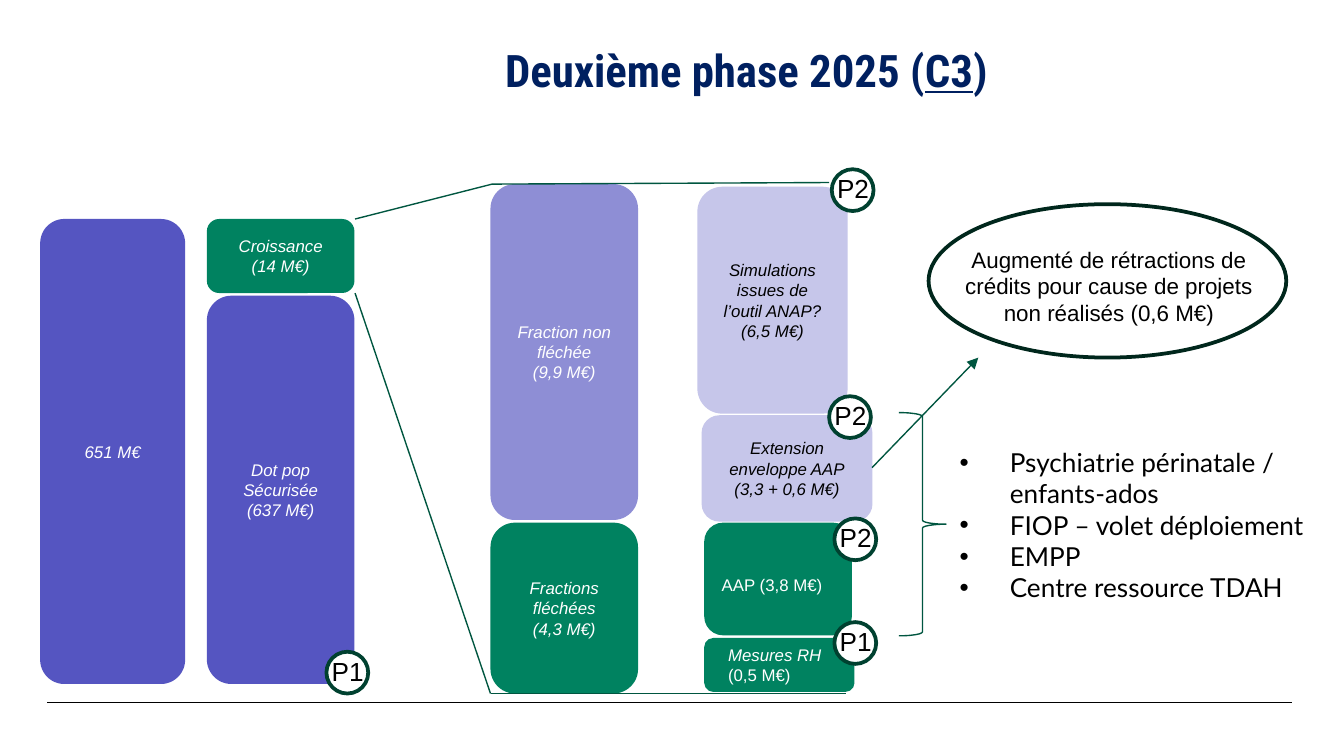
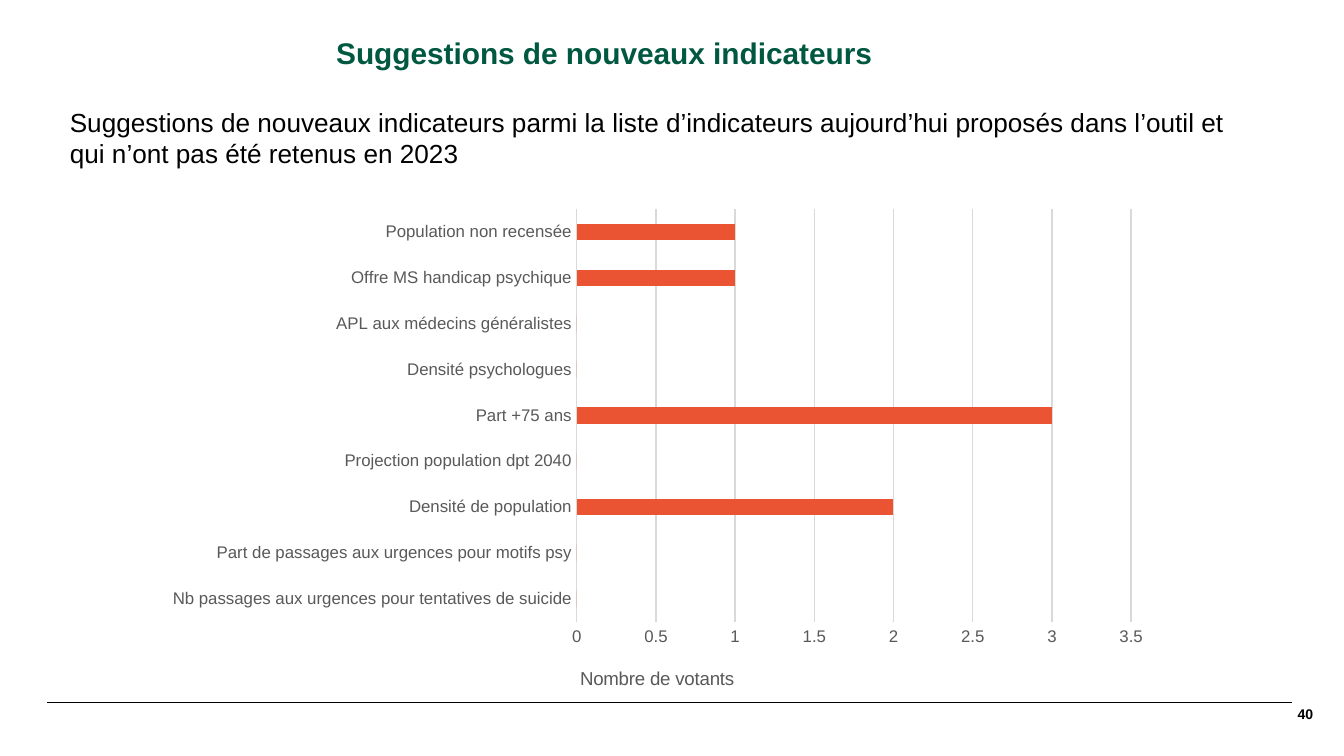
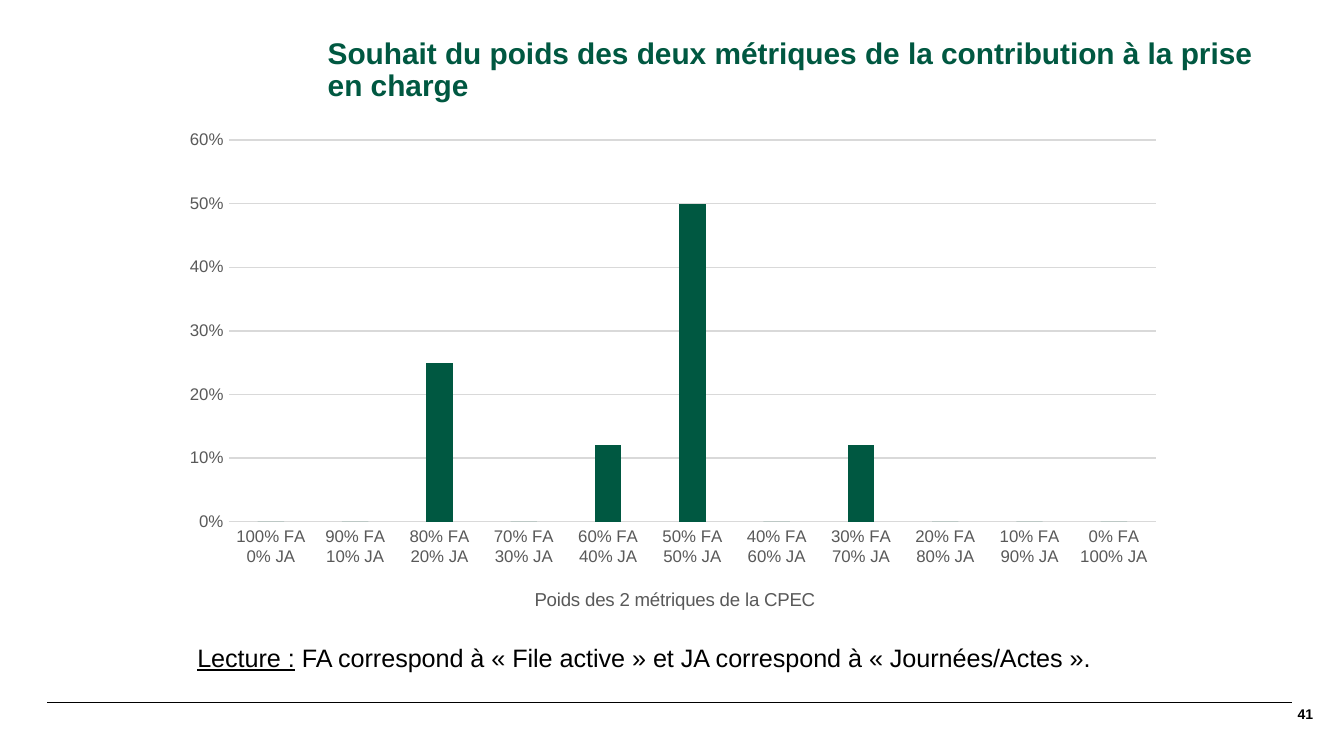
from dataclasses import dataclass
from typing import NamedTuple, Optional, Sequence

from pptx import Presentation
from pptx.chart.data import CategoryChartData
from pptx.dml.color import RGBColor
from pptx.enum.chart import XL_CHART_TYPE, XL_TICK_MARK
from pptx.enum.shapes import MSO_CONNECTOR, MSO_SHAPE
from pptx.enum.text import MSO_ANCHOR, MSO_AUTO_SIZE, PP_ALIGN
from pptx.oxml import parse_xml
from pptx.oxml.ns import nsdecls, qn
from pptx.util import Cm, Pt

LEFT, CENTER, RIGHT = PP_ALIGN.LEFT, PP_ALIGN.CENTER, PP_ALIGN.RIGHT
TOP, MIDDLE = MSO_ANCHOR.TOP, MSO_ANCHOR.MIDDLE
ROUNDED, OVAL, BRACE = MSO_SHAPE.ROUNDED_RECTANGLE, MSO_SHAPE.OVAL, MSO_SHAPE.RIGHT_BRACE
BARS, COLUMNS = XL_CHART_TYPE.BAR_CLUSTERED, XL_CHART_TYPE.COLUMN_CLUSTERED
STRAIGHT = MSO_CONNECTOR.STRAIGHT
NO_TICK = XL_TICK_MARK.NONE
NO_RESIZE = MSO_AUTO_SIZE.NONE
LAYOUT_BODY, LAYOUT_TITLE = 1, 5


class TextStyle(NamedTuple):
    size: float
    color: str
    font: str = "Arial"
    bold: bool = False
    italic: bool = False


@dataclass(frozen=True)
class Theme:
    black: str = "000000"
    white: str = "FFFFFF"
    green: str = "008260"
    deep_green: str = "005841"
    line_green: str = "005640"
    badge_green: str = "004130"
    oval_green: str = "00271C"
    violet: str = "5555C1"
    mid_violet: str = "8E8ED5"
    pale_violet: str = "C6C6EA"
    orange: str = "EA5433"
    grid: str = "D9D9D9"
    phase_title: TextStyle = TextStyle(24, "002060", "Roboto Condensed", bold=True)
    title: TextStyle = TextStyle(16, "005841", bold=True)
    lead: TextStyle = TextStyle(14, "000000")
    reading: TextStyle = TextStyle(13.5, "000000")
    bullets: TextStyle = TextStyle(14, "000000", "Lato")
    remark: TextStyle = TextStyle(12, "000000")
    on_dark: TextStyle = TextStyle(9, "FFFFFF", italic=True)
    on_dark_upright: TextStyle = TextStyle(9, "FFFFFF")
    on_pale: TextStyle = TextStyle(9, "000000", italic=True)
    number: TextStyle = TextStyle(7.5, "000000", bold=True)
    axis: TextStyle = TextStyle(9, "595959")
    axis_title: TextStyle = TextStyle(10, "595959")


THEME = Theme()


class Area(NamedTuple):
    left: float
    top: float
    width: float
    height: float

    def lengths(self) -> list:
        return [Cm(value) for value in self]


class Bar(NamedTuple):
    area: Area
    color: str
    lines: Sequence[str] = ()
    style: TextStyle = THEME.on_dark


class Badge(NamedTuple):
    left: float
    top: float
    label: str


class Line(NamedTuple):
    start: tuple
    end: tuple
    arrow: bool = False


class ChartPlan(NamedTuple):
    kind: int
    area: Area
    plot: tuple
    color: str
    gap: int
    overlap: int
    maximum: float
    step: float
    number_format: str
    axis_title: str
    title_left: float
    values: dict


def style_font(font, style: TextStyle) -> None:
    font.name = style.font
    font.size = Pt(style.size)
    font.bold = style.bold
    font.italic = style.italic
    font.color.rgb = RGBColor.from_string(style.color)


def write_text(frame, lines: Sequence[str], style: TextStyle, align=LEFT, anchor=TOP) -> None:
    frame.text = "\n".join(lines)
    frame.word_wrap = True
    frame.auto_size = NO_RESIZE
    frame.vertical_anchor = anchor
    for para in frame.paragraphs:
        para.alignment = align
        para.space_before = Pt(0)
        for span in para.runs:
            style_font(span.font, style)


def append_span(para, text: str, style: TextStyle, underline: bool = False) -> None:
    span = para.add_run()
    span.text = text
    style_font(span.font, style)
    span.font.underline = underline


def set_insets(frame, inset: float) -> None:
    frame.margin_left = frame.margin_right = Cm(inset)
    frame.margin_top = frame.margin_bottom = Cm(inset)


def place(box, area: Area) -> None:
    box.left, box.top, box.width, box.height = area.lengths()


def add_text(page, area: Area, lines: Sequence[str], style: TextStyle, align=LEFT, anchor=TOP):
    box = page.shapes.add_textbox(*area.lengths())
    write_text(box.text_frame, lines, style, align, anchor)
    return box.text_frame


def add_title(page, area: Area, text: str, style: TextStyle, align=LEFT, spacing: float = 0.9):
    box = page.shapes.title
    place(box, area)
    write_text(box.text_frame, [text], style, align)
    para = box.text_frame.paragraphs[0]
    para.line_spacing = spacing
    return box.text_frame


def add_figure(page, kind, area: Area, fill: Optional[str] = None,
               line: Optional[str] = None, weight: float = 2):
    shape = page.shapes.add_shape(kind, *area.lengths())
    shape.shadow.inherit = False
    if fill:
        shape.fill.solid()
        shape.fill.fore_color.rgb = RGBColor.from_string(fill)
    else:
        shape.fill.background()
    if line:
        shape.line.color.rgb = RGBColor.from_string(line)
        shape.line.width = Pt(weight)
    else:
        shape.line.fill.background()
    return shape


def add_line(page, line: Line, color: str = THEME.line_green, weight: float = 0.75) -> None:
    ends = [Cm(value) for value in line.start + line.end]
    connector = page.shapes.add_connector(STRAIGHT, *ends)
    connector.line.color.rgb = RGBColor.from_string(color)
    connector.line.width = Pt(weight)
    if line.arrow:
        connector.line._get_or_add_ln().append(
            parse_xml(f'<a:tailEnd {nsdecls("a")} type="triangle"/>'))
    connector._element.spPr.append(parse_xml(f'<a:effectLst {nsdecls("a")}/>'))


def add_bar(page, bar: Bar) -> None:
    shape = add_figure(page, ROUNDED, bar.area, bar.color)
    if bar.lines:
        write_text(shape.text_frame, bar.lines, bar.style, CENTER, MIDDLE)


def add_badge(page, badge: Badge) -> None:
    add_figure(page, OVAL, Area(badge.left, badge.top, 0.79, 0.79),
               THEME.white, THEME.badge_green)
    add_text(page, Area(badge.left - 0.15, badge.top - 0.06, 1.19, 0.86),
             [badge.label], THEME.lead)


def add_page(deck, layout: int, number: Optional[int] = None):
    page = deck.slides.add_slide(deck.slide_layouts[layout])
    add_line(page, Line((0.89, 13.28), (24.41, 13.28)), THEME.black, 1)
    if number:
        frame = add_text(page, Area(23.55, 12.95, 1.52, 1.09), [str(number)],
                         THEME.number, RIGHT, MIDDLE)
        set_insets(frame, 0.25)
    return page


def manual_layout(left: float, top: float, width: float = 0, height: float = 0):
    size = f'<c:w val="{width}"/><c:h val="{height}"/>' if width else ""
    target = '<c:layoutTarget val="inner"/>' if width else ""
    return parse_xml(
        f'<c:layout {nsdecls("c")}><c:manualLayout>{target}'
        f'<c:xMode val="edge"/><c:yMode val="edge"/>'
        f'<c:x val="{left}"/><c:y val="{top}"/>{size}</c:manualLayout></c:layout>')


def set_layout(parent, layout, index: int) -> None:
    for old in parent.findall(qn("c:layout")):
        parent.remove(old)
    parent.insert(index, layout)


def add_vote_chart(page, plan: ChartPlan) -> None:
    data = CategoryChartData()
    data.categories = list(plan.values)
    data.add_series("Series 1", list(plan.values.values()))
    chart = page.shapes.add_chart(plan.kind, *plan.area.lengths(), data).chart
    chart.has_legend = False
    chart.has_title = False
    style_font(chart.font, THEME.axis_title)
    set_layout(chart._chartSpace.chart.plotArea, manual_layout(*plan.plot), 0)

    plot = chart.plots[0]
    plot.vary_by_categories = False
    plot.gap_width = plan.gap
    plot.overlap = plan.overlap
    fill = plot.series[0].format.fill
    fill.solid()
    fill.fore_color.rgb = RGBColor.from_string(plan.color)

    categories, scale = chart.category_axis, chart.value_axis
    for axis in (categories, scale):
        axis.major_tick_mark = axis.minor_tick_mark = NO_TICK
        style_font(axis.tick_labels.font, THEME.axis)
    categories.has_major_gridlines = False
    scale.has_major_gridlines = True
    for line in (categories.format.line, scale.major_gridlines.format.line):
        line.color.rgb = RGBColor.from_string(THEME.grid)
        line.width = Pt(0.75)
    scale.format.line.fill.background()
    scale.minimum_scale, scale.maximum_scale = 0, plan.maximum
    scale.major_unit = plan.step
    scale.tick_labels.number_format = plan.number_format
    scale.tick_labels.number_format_is_linked = False

    titled = scale if plan.kind == BARS else categories
    frame = titled.axis_title.text_frame
    frame.text = plan.axis_title
    style_font(frame.paragraphs[0].runs[0].font, THEME.axis_title)
    set_layout(titled.axis_title._element, manual_layout(plan.title_left, 0.9), 1)


def build_phase_page(deck) -> None:
    page = add_page(deck, LAYOUT_BODY)
    frame = add_title(page, Area(3.5, 0.46, 21.21, 2.21), "Deuxième phase 2025 (",
                      THEME.phase_title, CENTER, 1.1)
    set_insets(frame, 0.25)
    append_span(frame.paragraphs[0], "C3", THEME.phase_title, underline=True)
    append_span(frame.paragraphs[0], ")", THEME.phase_title)

    bars = [
        Bar(Area(0.76, 4.14, 2.74, 8.79), THEME.violet, ["651 M€"]),
        Bar(Area(3.91, 5.59, 2.79, 7.34), THEME.violet, ["Dot pop", "Sécurisée", "(637 M€)"]),
        Bar(Area(3.91, 4.14, 2.79, 1.4), THEME.green, ["Croissance", "(14 M€)"]),
        Bar(Area(9.27, 9.88, 2.79, 3.23), THEME.green, ["Fractions fléchées", "(4,3 M€)"]),
        Bar(Area(9.27, 3.48, 2.79, 6.35), THEME.mid_violet, ["Fraction non fléchée", "(9,9 M€)"]),
        Bar(Area(13.31, 9.88, 2.79, 2.13), THEME.green),
        Bar(Area(13.31, 12.06, 2.84, 1.02), THEME.green),
        Bar(Area(13.26, 7.85, 3.23, 2.01), THEME.pale_violet,
            ["Extension enveloppe AAP", "(3,3 + 0,6 M€)"], THEME.on_pale),
        Bar(Area(13.18, 3.53, 2.84, 4.29), THEME.pale_violet,
            ["Simulations issues de l’outil ANAP?", "(6,5 M€)"], THEME.on_pale),
    ]
    for bar in bars:
        add_bar(page, bar)
    add_text(page, Area(13.39, 10.74, 2.79, 0.64), ["AAP (3,8 M€)"], THEME.on_dark_upright)
    staff = add_text(page, Area(13.51, 12.06, 2.59, 1.02), ["Mesures RH", "(0,5 M€)"],
                     THEME.on_dark)
    staff.paragraphs[1].runs[0].font.italic = False

    lines = [
        Line((6.71, 5.54), (9.27, 13.11)),
        Line((6.71, 4.14), (9.3, 3.48)),
        Line((9.27, 13.11), (15.98, 13.11)),
        Line((9.3, 3.48), (15.67, 3.45)),
        Line((16.48, 8.84), (18.49, 6.76), arrow=True),
    ]
    for line in lines:
        add_line(page, line)
    add_figure(page, BRACE, Area(16.99, 7.8, 0.89, 4.22), line=THEME.line_green, weight=0.75)

    badges = [
        Badge(15.77, 11.76, "P1"),
        Badge(15.77, 9.8, "P2"),
        Badge(15.67, 7.49, "P2"),
        Badge(15.72, 3.2, "P2"),
        Badge(6.17, 12.32, "P1"),
    ]
    for badge in badges:
        add_badge(page, badge)

    add_figure(page, OVAL, Area(17.55, 3.86, 6.76, 2.9), line=THEME.oval_green)
    add_text(page, Area(17.86, 4.52, 6.2, 1.8),
             ["Augmenté de rétractions de crédits pour cause de projets non réalisés (0,6 M€)"],
             THEME.remark, CENTER)

    body = page.placeholders[1]
    place(body, Area(17.88, 8.31, 7.39, 3.25))
    write_text(body.text_frame, ["Psychiatrie périnatale / enfants-ados",
                                 "FIOP – volet déploiement", "EMPP",
                                 "Centre ressource TDAH"], THEME.bullets)
    for para in body.text_frame.paragraphs:
        properties = para._p.get_or_add_pPr()
        properties.set("marL", str(Cm(0.95)))
        properties.set("indent", str(-Cm(0.95)))


def build_indicator_page(deck) -> None:
    page = add_page(deck, LAYOUT_TITLE, 40)
    add_title(page, Area(6.1, 0.61, 18.61, 0.86), "Suggestions de nouveaux indicateurs",
              THEME.title)
    add_text(page, Area(1.07, 1.88, 22.71, 1.45),
             ["Suggestions de nouveaux indicateurs parmi la liste d’indicateurs aujourd’hui "
              "proposés dans l’outil et qui n’ont pas été retenus en 2023"], THEME.lead)
    votes = {
        "Nb passages aux urgences pour tentatives de suicide": 0,
        "Part de passages aux urgences pour motifs psy": 0,
        "Densité de population": 2,
        "Projection population dpt 2040": 0,
        "Part +75 ans": 3,
        "Densité psychologues": 0,
        "APL aux médecins généralistes": 0,
        "Offre MS handicap psychique": 1,
        "Population non recensée": 1,
    }
    add_vote_chart(page, ChartPlan(
        BARS, Area(2.9, 3.76, 19.05, 9.75), (0.42, 0.02, 0.55, 0.8), THEME.orange,
        182, 0, 3.5, 0.5, "General", "Nombre de votants", 0.42, votes))


def build_weight_page(deck) -> None:
    page = add_page(deck, LAYOUT_TITLE, 41)
    add_title(page, Area(5.94, 0.61, 18.77, 1.5),
              "Souhait du poids des deux métriques de la contribution à la prise en charge",
              THEME.title)
    shares = [0, 0, 0.25, 0, 0.12, 0.5, 0, 0.12, 0, 0, 0]
    weights = {f"{100 - 10 * step}% FA {10 * step}% JA": share
               for step, share in enumerate(shares)}
    add_vote_chart(page, ChartPlan(
        COLUMNS, Area(3.18, 2.26, 19.05, 9.75), (0.06, 0.04, 0.92, 0.74), THEME.deep_green,
        219, -27, 0.6, 0.1, "0%", "Poids des 2 métriques de la CPEC", 0.36, weights))
    frame = add_text(page, Area(3.48, 12.01, 19.05, 0.84), ["Lecture :"], THEME.reading)
    para = frame.paragraphs[0]
    para.runs[0].font.underline = True
    append_span(para, " FA correspond à « File active » et JA correspond à « Journées/Actes ».",
                THEME.reading)


def main() -> None:
    deck = Presentation()
    deck.slide_width, deck.slide_height = Cm(25.4), Cm(14.29)
    build_phase_page(deck)
    build_indicator_page(deck)
    build_weight_page(deck)
    deck.save("out.pptx")


if __name__ == "__main__":
    main()
